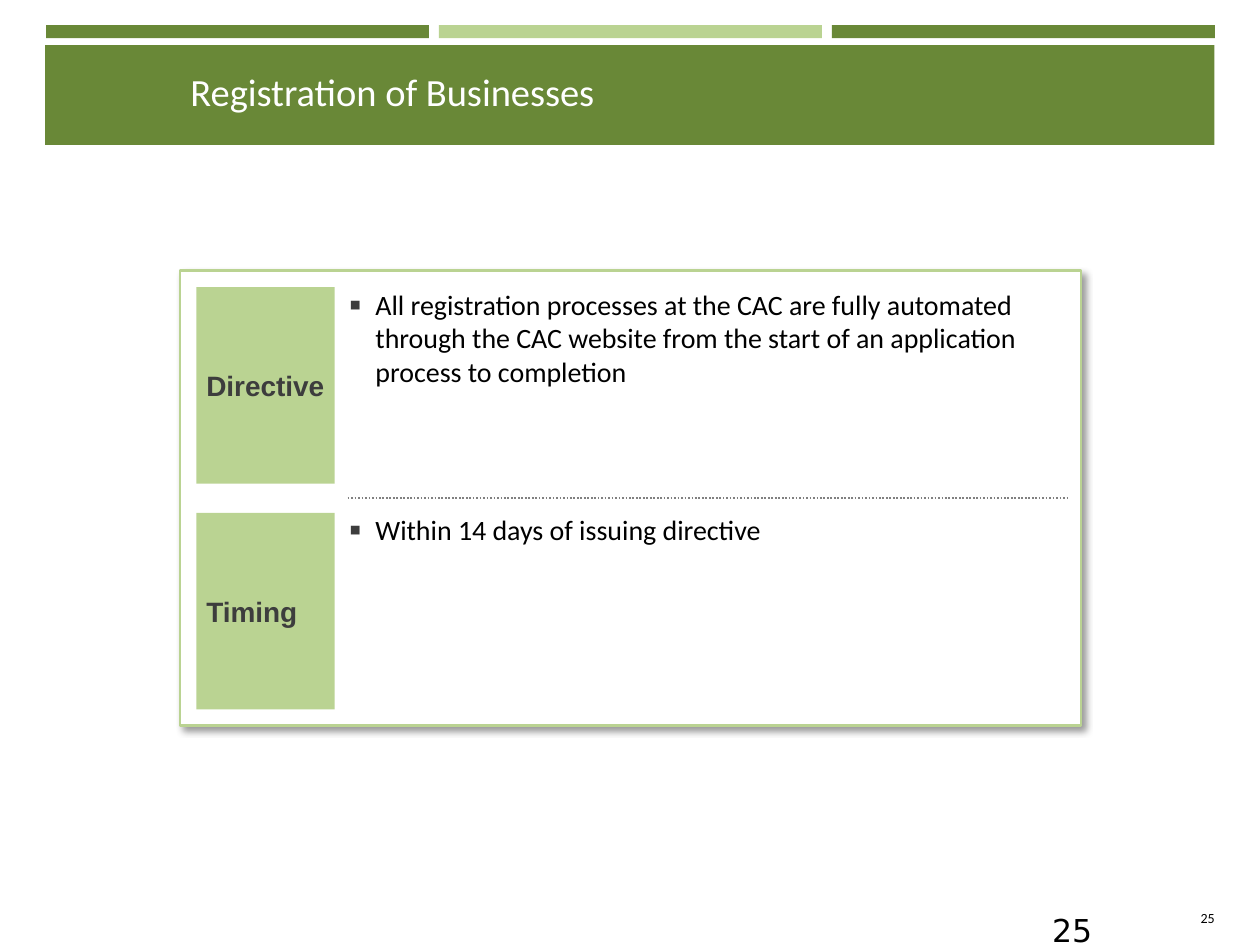
import pptx
import pptx.dml.color
import pptx.enum.dml
import pptx.enum.shapes
import pptx.enum.text
import pptx.oxml
import pptx.oxml.ns
import pptx.util
from pptx.dml.color import RGBColor
from pptx.enum.text import MSO_ANCHOR, PP_ALIGN
from pptx.util import Cm, Pt

DARK_GREEN = RGBColor(0x69, 0x88, 0x37)
LIGHT_GREEN = RGBColor(0xBA, 0xD3, 0x92)
WHITE = RGBColor(0xFF, 0xFF, 0xFF)
BLACK = RGBColor(0x00, 0x00, 0x00)
CHARCOAL = RGBColor(0x3D, 0x3D, 0x3D)
GREY = RGBColor(0x80, 0x80, 0x80)

ROWS = [
    ("Directive",
     "All registration processes at the CAC are fully automated through the CAC "
     "website from the start of an application process to completion", 2.06),
    ("Timing", "Within 14 days of issuing directive", 0.69),
]
ROW_TOP, ROW_STEP, LABEL_HEIGHT = 5.79, 4.55, 3.96
CONTENT_LEFT, CONTENT_WIDTH = 7.01, 14.5


def xml_element(markup):
    return pptx.oxml.parse_xml(markup.replace(">", f" {pptx.oxml.ns.nsdecls('a')}>", 1))


def set_text(shape, text, size, color, font="Calibri", bold=False, inset=0.0,
             anchor=MSO_ANCHOR.TOP, align=PP_ALIGN.LEFT, wrap=True, bullet=False):
    frame = shape.text_frame
    frame.auto_size = pptx.enum.text.MSO_AUTO_SIZE.NONE
    frame.word_wrap = wrap
    frame.vertical_anchor = anchor
    frame.margin_left = frame.margin_right = Cm(inset)
    frame.margin_top = frame.margin_bottom = Cm(inset)
    frame.text = text
    paragraph = frame.paragraphs[0]
    paragraph.alignment = align
    if bullet:
        add_bullet(paragraph)
    font_format = paragraph.runs[0].font
    font_format.name = font
    font_format.size = Pt(size)
    font_format.bold = bold
    font_format.color.rgb = color


def add_bullet(paragraph):
    paragraph.space_after = Pt(3)
    properties = paragraph._p.get_or_add_pPr()
    properties.set("marL", str(Cm(0.56)))
    properties.set("indent", str(Cm(-0.53)))
    for markup in (f'<a:buClr><a:srgbClr val="{CHARCOAL}"/></a:buClr>',
                   '<a:buSzPct val="125000"></a:buSzPct>',
                   '<a:buFont typeface="Arial"></a:buFont>',
                   '<a:buChar char="▪"></a:buChar>'):
        properties.append(xml_element(markup))


def add_text(slide, left, top, width, height, text, **text_format):
    box = slide.shapes.add_textbox(Cm(left), Cm(top), Cm(width), Cm(height))
    set_text(box, text, **text_format)


def add_rectangle(slide, left, top, width, height, fill, line=None):
    shape = slide.shapes.add_shape(pptx.enum.shapes.MSO_SHAPE.RECTANGLE,
                                   Cm(left), Cm(top), Cm(width), Cm(height))
    shape.shadow.inherit = False
    shape.fill.solid()
    shape.fill.fore_color.rgb = fill
    if line is None:
        shape.line.fill.background()
    else:
        shape.line.color.rgb = line
        shape.line.width = Pt(1.5)
    return shape


def add_panel(slide):
    panel = add_rectangle(slide, 3.63, 5.46, 18.16, 9.17, WHITE, line=LIGHT_GREEN)
    effects = panel._element.spPr.find(pptx.oxml.ns.qn("a:effectLst"))
    shadow = xml_element(
        f'<a:outerShdw><a:srgbClr val="{BLACK}"><a:alpha val="40000"/></a:srgbClr></a:outerShdw>')
    shadow.set("blurRad", str(Pt(4)))
    shadow.set("dist", str(Pt(3)))
    shadow.set("dir", str(45 * 60000))
    effects.append(shadow)


def add_divider(slide, left, top, width):
    divider = slide.shapes.add_connector(pptx.enum.shapes.MSO_CONNECTOR.STRAIGHT,
                                         Cm(left), Cm(top), Cm(left + width), Cm(top))
    divider.line.color.rgb = GREY
    divider.line.width = Pt(1)
    divider.line.dash_style = pptx.enum.dml.MSO_LINE.ROUND_DOT
    divider._element.spPr.append(xml_element("<a:effectLst></a:effectLst>"))


def add_header(slide, text):
    add_rectangle(slide, 0.91, 0.91, 23.57, 2.01, DARK_GREEN)
    for index, color in enumerate((DARK_GREEN, LIGHT_GREEN, DARK_GREEN)):
        add_rectangle(slide, 0.93 + index * 7.92, 0.51, 7.72, 0.26, color)
    title = slide.shapes.title
    title.left, title.top, title.width, title.height = Cm(3.84), Cm(1.37), Cm(20.95), Cm(0.94)
    set_text(title, text, size=22, color=WHITE, anchor=MSO_ANCHOR.BOTTOM)
    # Bring the title in front of the band
    slide.shapes._spTree.append(title._element)


def main():
    presentation = pptx.Presentation()
    presentation.slide_width, presentation.slide_height = Cm(25.4), Cm(19.05)
    slide = presentation.slides.add_slide(presentation.slide_layouts[5])

    add_header(slide, "Registration of Businesses")

    # Panel with one labelled row per topic
    add_panel(slide)
    for index, (label, content, height) in enumerate(ROWS):
        top = ROW_TOP + index * ROW_STEP
        label_box = add_rectangle(slide, 3.96, top, 2.79, LABEL_HEIGHT, LIGHT_GREEN)
        set_text(label_box, label, size=16, color=CHARCOAL, font="Arial", bold=True,
                 inset=0.2, anchor=MSO_ANCHOR.MIDDLE)
        add_text(slide, CONTENT_LEFT, top, CONTENT_WIDTH, height, content,
                 size=16, color=BLACK, bullet=True)
    add_divider(slide, CONTENT_LEFT, ROW_TOP + (LABEL_HEIGHT + ROW_STEP) / 2, CONTENT_WIDTH)

    # Page numbers
    add_text(slide, 21.01, 18.16, 1.96, 1.02, "25", size=18, color=BLACK,
             font="DejaVu Sans", inset=0.2)
    add_text(slide, 24.13, 18.34, 0.36, 0.33, "25", size=8, color=BLACK,
             anchor=MSO_ANCHOR.MIDDLE, align=PP_ALIGN.RIGHT, wrap=False)

    presentation.save("out.pptx")


if __name__ == "__main__":
    main()
